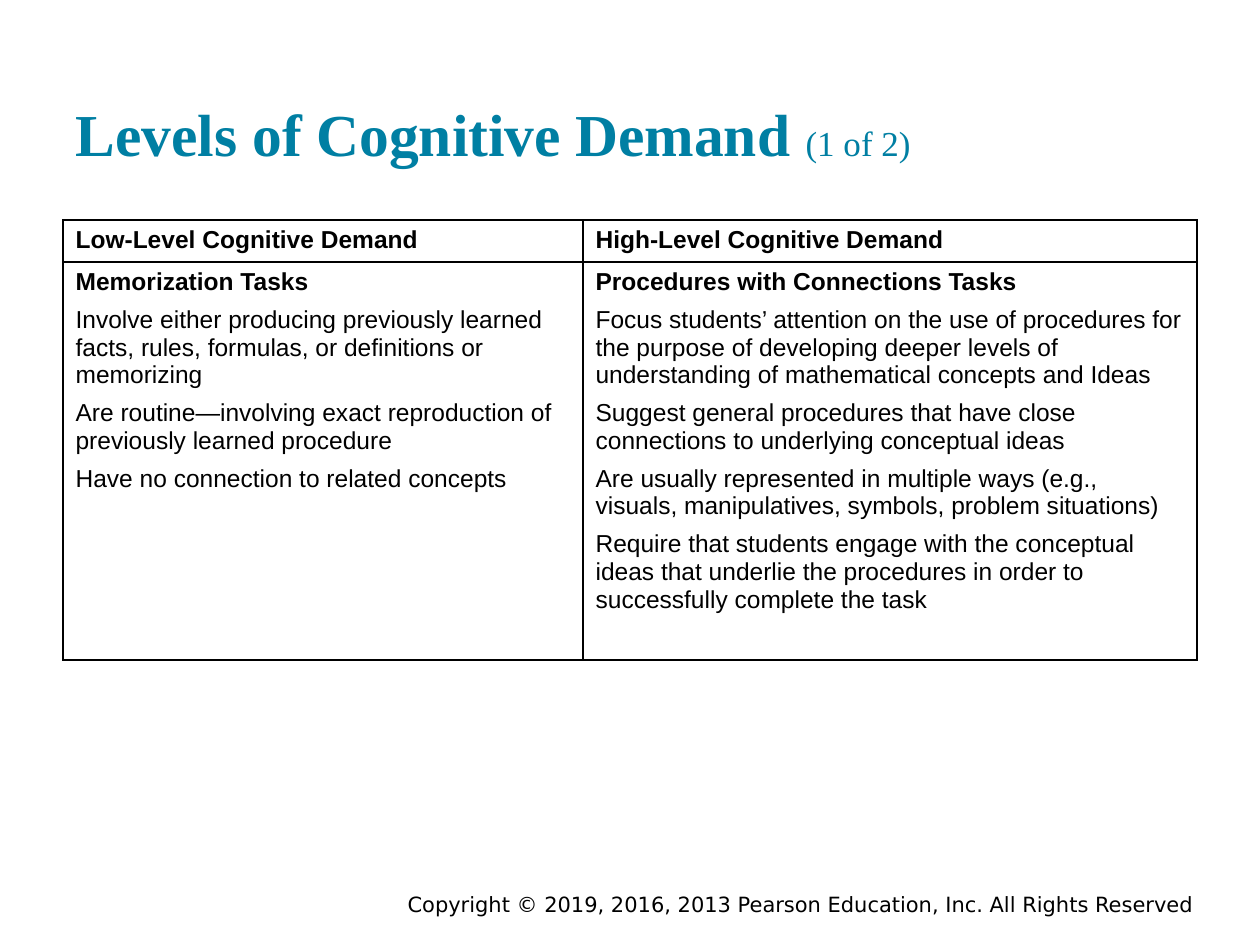
"""Build a slide that sets out levels of cognitive demand in a table."""
from lxml import etree
from pptx import Presentation
from pptx import util as u
from pptx.dml.color import RGBColor
from pptx.enum import text
from pptx.oxml import ns

BLACK = RGBColor(0x00, 0x00, 0x00)
TEAL = RGBColor(0x00, 0x7F, 0xA3)
PX = 914400 / 126
COLS = (520, 614)
ROWS = (40, 398)
HEADS = ("Low-Level Cognitive Demand", "High-Level Cognitive Demand")
LOW = (
    "Memorization Tasks",
    "Involve either producing previously learned facts, rules, formulas, "
    "or definitions or memorizing",
    "Are routine—involving exact reproduction of previously learned procedure",
    "Have no connection to related concepts",
)
HIGH = (
    "Procedures with Connections Tasks",
    "Focus students’ attention on the use of procedures for the purpose of "
    "developing deeper levels of understanding of mathematical concepts and Ideas",
    "Suggest general procedures that have close connections to underlying "
    "conceptual ideas",
    "Are usually represented in multiple ways (e.g., visuals, manipulatives, "
    "symbols, problem situations)",
    "Require that students engage with the conceptual ideas that underlie the "
    "procedures in order to successfully complete the task",
)


def px(n):
    """Turn pixels into EMU."""
    return u.Emu(round(n * PX))


def style(font, name, size, color, bold=False):
    """Set the face, size, colour and weight of a font."""
    font.name, font.size, font.bold = name, u.Pt(size), bold
    font.color.rgb = color


def add_box(slide, box, anchor, pad):
    """Add a wrapping text box and return its first paragraph."""
    frame = slide.shapes.add_textbox(*map(px, box)).text_frame
    frame.word_wrap = True
    frame.vertical_anchor = anchor
    frame.margin_left = frame.margin_right = px(13)
    frame.margin_top = frame.margin_bottom = px(pad)
    return frame.paragraphs[0]


def add_title(slide, main, part):
    """Add the bold title with its small part number."""
    para = add_box(slide, (63, 30, 1134, 151), text.MSO_ANCHOR.BOTTOM, 13)
    for words, size, bold in ((main, 34, True), (part, 20, False)):
        run = para.add_run()
        run.text = words
        style(run.font, "Times New Roman", size, TEAL, bold)


def add_foot(slide, words):
    """Add the copyright line at the lower right."""
    para = add_box(slide, (368, 888, 839, 32), text.MSO_ANCHOR.MIDDLE, 6)
    para.text = words
    para.alignment = text.PP_ALIGN.RIGHT
    style(para.font, "DejaVu Sans", 12, BLACK)


def add_edges(cell):
    """Draw a thin black line on each side of a cell."""
    props = cell._tc.get_or_add_tcPr()
    for side in "LRTB":
        line = etree.SubElement(props, ns.qn(f"a:ln{side}"), w=str(u.Pt(1)))
        fill = etree.SubElement(line, ns.qn("a:solidFill"))
        etree.SubElement(fill, ns.qn("a:srgbClr"), val=str(BLACK))


def fill_cell(cell, lines):
    """Write a bold first line and plain lines below it."""
    add_edges(cell)
    cell.fill.background()
    frame = cell.text_frame
    frame.text = "\n".join(lines)
    for i, para in enumerate(frame.paragraphs):
        style(para.font, "Arial", 14, BLACK, i == 0)
        if i:
            para.space_before = u.Pt(6)


def add_grid(slide, rows):
    """Add the table that compares the two levels."""
    box = (63, 220, sum(COLS), sum(ROWS))
    table = slide.shapes.add_table(len(ROWS), len(COLS), *map(px, box)).table
    table.first_row = table.horz_banding = False
    for col, wide in zip(table.columns, COLS):
        col.width = px(wide)
    for row, high, cells in zip(table.rows, ROWS, rows):
        row.height = px(high)
        for cell, lines in zip(row.cells, cells):
            fill_cell(cell, lines)


def main():
    """Build and save the slide."""
    deck = Presentation()
    deck.slide_width, deck.slide_height = px(1260), px(945)
    slide = deck.slides.add_slide(deck.slide_layouts[6])
    add_foot(slide, "Copyright © 2019, 2016, 2013 Pearson Education, Inc. "
                    "All Rights Reserved")
    add_title(slide, "Levels of Cognitive Demand ", "(1 of 2)")
    add_grid(slide, ([(head,) for head in HEADS], (LOW, HIGH)))
    deck.save("out.pptx")


if __name__ == "__main__":
    main()
